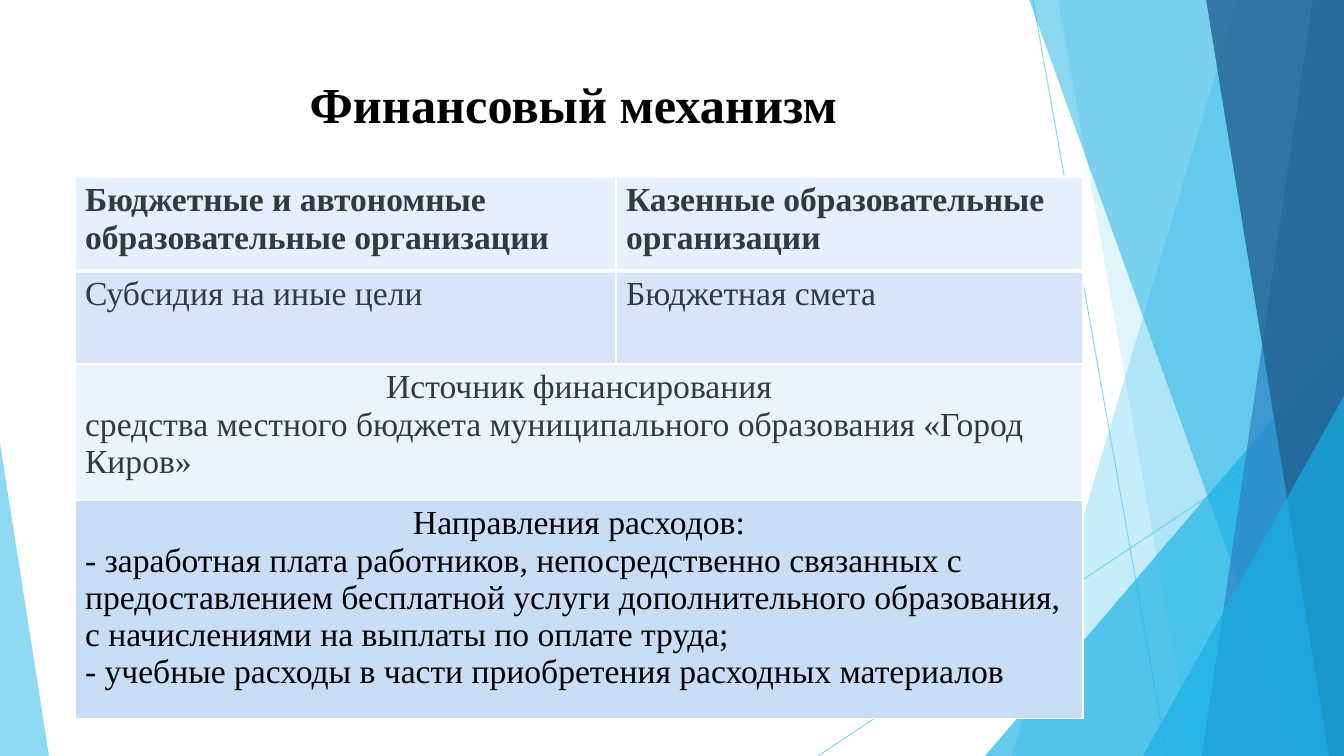
from pptx import Presentation, util as u
from pptx.dml.color import RGBColor
from pptx.enum import shapes as sh, text as tx
from pptx.oxml import parse_xml
from pptx.oxml.ns import nsdecls, qn

# Content
TITLE = "Финансовый механизм"
FONT = "Times New Roman"
GREY, BLACK, WHITE = "2C3C43", "000000", "FFFFFF"
COLS = [541, 467]
# height, fill, text colour, bold, cells; a lone cell spans the row with a centred heading
ROWS = [
    (94, "E5F0FC", GREY, True, [
        ["Бюджетные и автономные образовательные организации"],
        ["Казенные образовательные организации"]]),
    (93, "D7E5F9", GREY, False, [["Субсидия на иные цели"], ["Бюджетная смета"]]),
    (136, "ECF3FC", GREY, False, [[
        "Источник финансирования",
        "средства местного бюджета муниципального образования «Город Киров»"]]),
    (219, "CADDF6", BLACK, False, [[
        "Направления расходов:",
        "- заработная плата работников, непосредственно связанных с предоставлением "
        "бесплатной услуги дополнительного образования, с начислениями на выплаты "
        "по оплате труда;",
        "- учебные расходы в части приобретения расходных материалов"]]),
]

# Backdrop, back to front, in px
W, H = 1344, 756
LINES = [(1033, 0, 1167, H), (W, 406, 818, H)]
# bands: top left x, bottom left x, bottom right x, colour, opacity
# triangles: left, top, width, height, apex, colour, opacity
DECOR = [
    ("band", 1238, 1012, W, "5FCBEF", 36),
    ("band", 1058, 1192, W, "5FCBEF", 20),
    ("tri", 985, 336, 359, 420, 1, "17B0E4", 66),
    ("band", 1029, 1301, W, "17B0E4", 50),
    ("band", 1313, 1202, W, "2E83C3", 70),
    ("band", 1206, 1329, W, "226292", 80),
    ("tri", 1143, 396, 201, 360, 1, "17B0E4", 66),
    ("tri", 0, 443, 49, 313, 0, "5FCBEF", 70),
]
SCALE = 914400 / 100.8


def px(n):
    return u.Emu(round(n * SCALE))


def rgb(code):
    return RGBColor.from_string(code)


def fade(fill, pct):
    tone = fill._xPr.find(qn("a:solidFill"))[0]
    tone.append(parse_xml(f'<a:alpha {nsdecls("a")} val="{pct * 1000}"/>'))


def style(para, size, color, bold):
    font = para.font
    font.name, font.size, font.bold = FONT, u.Pt(size), bold
    font.color.rgb = rgb(color)


def border(cell, side, width):
    cell._tc.get_or_add_tcPr().append(parse_xml(
        f'<a:ln{side} {nsdecls("a")} w="{u.Pt(width)}"><a:solidFill>'
        f'<a:srgbClr val="{WHITE}"/></a:solidFill></a:ln{side}>'))


prs = Presentation()
prs.slide_width, prs.slide_height = px(W), px(H)
slide = prs.slides.add_slide(prs.slide_layouts[5])
items = slide.shapes

# Thin lines
for x1, y1, x2, y2 in LINES:
    line = items.add_connector(sh.MSO_CONNECTOR.STRAIGHT, px(x1), px(y1), px(x2), px(y2))
    line.line.width = u.Pt(0.75)
    line.line.color.rgb = rgb("5FCBEF")
    fade(line.line.fill, 70)
    line.element.spPr.append(parse_xml(f'<a:effectLst {nsdecls("a")}/>'))

# Bands and triangles
for kind, *geo, color, pct in DECOR:
    if kind == "band":
        top, left, right = geo
        path = items.build_freeform(top, -1, scale=SCALE)
        path.add_line_segments([(W, -1), (right, H), (left, H)], close=True)
        part = path.convert_to_shape()
    else:
        *box, apex = geo
        part = items.add_shape(sh.MSO_SHAPE.ISOSCELES_TRIANGLE, *map(px, box))
        part.adjustments[0] = apex
    part.shadow.inherit = False
    part.line.fill.background()
    part.fill.solid()
    part.fill.fore_color.rgb = rgb(color)
    fade(part.fill, pct)

# Title, in front of the backdrop
title = items.title
title.left, title.top, title.width, title.height = map(px, (75, 68, 947, 145))
frame = title.text_frame
frame.text = TITLE
frame.auto_size = tx.MSO_AUTO_SIZE.NONE
frame.vertical_anchor = tx.MSO_ANCHOR.TOP
frame.margin_left = px(60)
frame.paragraphs[0].alignment = tx.PP_ALIGN.CENTER
style(frame.paragraphs[0], 36, BLACK, True)
title.element.getparent().append(title.element)

# Table
high = sum(row[0] for row in ROWS)
table = items.add_table(len(ROWS), len(COLS), px(75), px(177), px(sum(COLS)), px(high)).table
for col, wide in zip(table.columns, COLS):
    col.width = px(wide)
for r, (tall, fill, color, bold, cells) in enumerate(ROWS):
    table.rows[r].height = px(tall)
    span = len(cells) == 1
    if span:
        table.cell(r, 0).merge(table.cell(r, 1))
    for c in range(len(COLS)):
        cell = table.cell(r, c)
        for side in "LRTB":
            thick = (r, side) in [(0, "B"), (1, "T")]
            border(cell, side, 3 if thick else 1)
        cell.fill.solid()
        cell.fill.fore_color.rgb = rgb(fill)
        if c < len(cells):
            cell.text_frame.text = "\n".join(cells[c])
            for para in cell.text_frame.paragraphs:
                style(para, 24, color, bold)
            if span:
                cell.text_frame.paragraphs[0].alignment = tx.PP_ALIGN.CENTER

prs.save("out.pptx")
